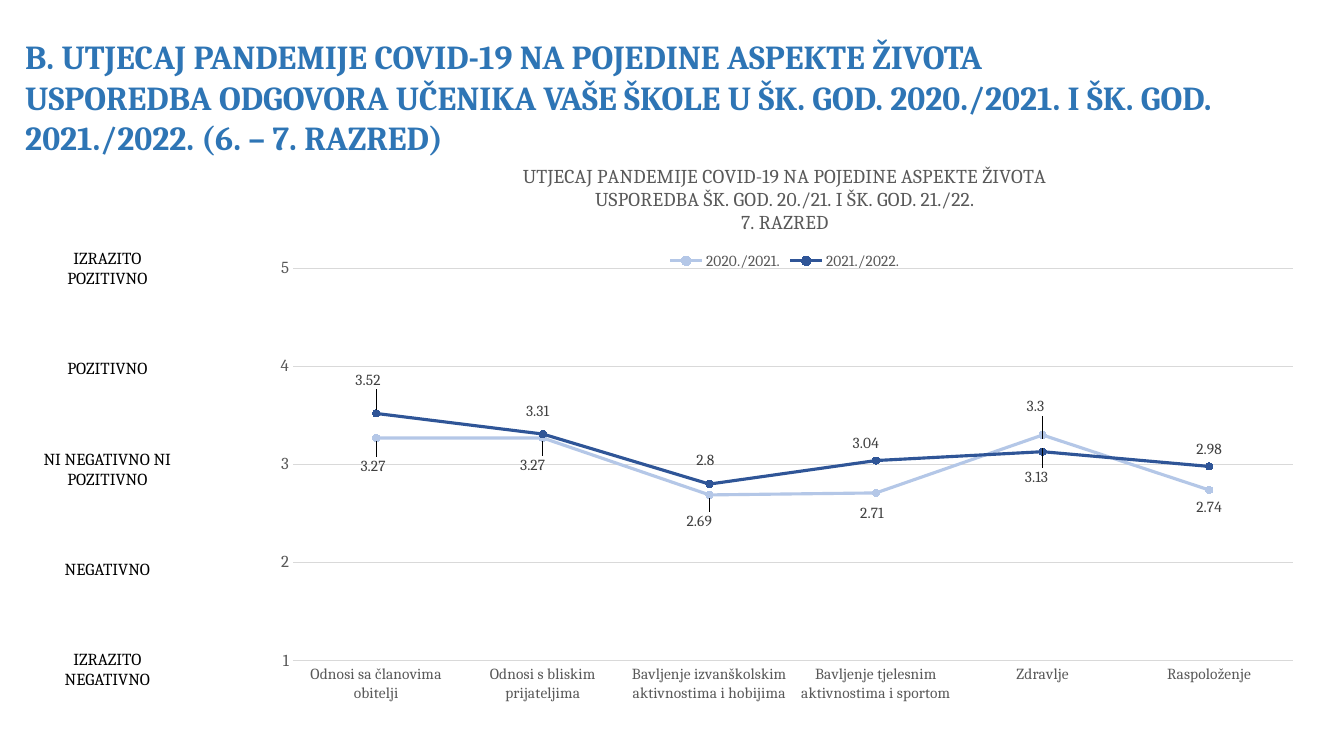
from lxml import etree
from pptx import Presentation
from pptx.chart.data import CategoryChartData
from pptx.dml.color import RGBColor
from pptx.enum.chart import XL_CHART_TYPE, XL_LABEL_POSITION, XL_LEGEND_POSITION, XL_MARKER_STYLE, XL_TICK_MARK
from pptx.enum.text import MSO_ANCHOR, MSO_AUTO_SIZE, PP_ALIGN
from pptx.oxml.ns import qn
from pptx.util import Inches, Pt

LINE = XL_CHART_TYPE.LINE_MARKERS
ABOVE, BELOW = XL_LABEL_POSITION.ABOVE, XL_LABEL_POSITION.BELOW
TOP_KEY = XL_LEGEND_POSITION.TOP
CIRCLE = XL_MARKER_STYLE.CIRCLE
NO_TICK = XL_TICK_MARK.NONE
TOP, FIXED = MSO_ANCHOR.TOP, MSO_AUTO_SIZE.NONE
LEFT, CENTER = PP_ALIGN.LEFT, PP_ALIGN.CENTER

HEAD = [
    "B. UTJECAJ PANDEMIJE COVID-19 NA POJEDINE ASPEKTE ŽIVOTA",
    "USPOREDBA ODGOVORA UČENIKA VAŠE ŠKOLE U ŠK. GOD. 2020./2021. I ŠK. GOD. 2021./2022. (6. – 7. RAZRED)",
]
SCALE = ["IZRAZITO POZITIVNO", "POZITIVNO", "NI NEGATIVNO NI POZITIVNO", "NEGATIVNO", "IZRAZITO NEGATIVNO"]
CAPTION = [
    "UTJECAJ PANDEMIJE COVID-19 NA POJEDINE ASPEKTE ŽIVOTA",
    "USPOREDBA ŠK. GOD. 20./21. I ŠK. GOD. 21./22.",
    "7. RAZRED",
]
TOPICS = [
    "Odnosi sa članovima obitelji",
    "Odnosi s bliskim prijateljima",
    "Bavljenje izvanškolskim aktivnostima i hobijima",
    "Bavljenje tjelesnim aktivnostima i sportom",
    "Zdravlje",
    "Raspoloženje",
]
YEARS = [
    {"name": "2020./2021.", "vals": [3.27, 3.27, 2.69, 2.71, 3.3, 2.74], "color": "pale", "side": BELOW,
     "shifts": [(-0.03, 0.11), (-0.1, 0.1), (-0.1, 0.09), (-0.04, 0.03), (-0.07, -0.45)]},
    {"name": "2021./2022.", "vals": [3.52, 3.31, 2.8, 3.04, 3.13, 2.98], "color": "deep", "side": ABOVE,
     "shifts": [(-0.08, -0.16), (-0.05, -0.06), (-0.04, -0.07), (-0.1, 0), (-0.06, 0.42)]},
]
THEME = {
    "font": "Cambria",
    "color": {"head": "2E75B5", "ink": "000000", "gray": "595959", "label": "404040",
              "grid": "D9D9D9", "pale": "B4C7E7", "deep": "2F5597"},
    "size": {"head": 24, "caption": 14, "scale": 12, "small": 11},
}
WIDE, HIGH = 11.09, 6.08
PLOT = {"x": 0.06, "y": 0.204, "w": 0.894, "h": 0.641}


def paint(name):
    return RGBColor.from_string(THEME["color"][name])


def style(font, size, color, bold=False):
    font.name = THEME["font"]
    font.size = Pt(THEME["size"][size])
    font.bold = bold
    font.color.rgb = paint(color)


def fill_text(frame, lines, size, color, align, bold=False, gap=0):
    frame.text = "\n".join(lines)
    for i, para in enumerate(frame.paragraphs):
        para.alignment = align
        if i and gap:
            para.space_before = Pt(gap)
        for run in para.runs:
            style(run.font, size, color, bold)


def layout(parts):
    root = etree.Element(qn("c:layout"))
    manual = etree.SubElement(root, qn("c:manualLayout"))
    for tag, val in parts.items():
        etree.SubElement(manual, qn("c:" + tag)).set("val", str(val))
    return root


def draw_line(line, name, width):
    line.color.rgb = paint(name)
    line.width = Pt(width)


def add_chart(slide):
    data = CategoryChartData()
    data.categories = TOPICS
    for year in YEARS:
        data.add_series(year["name"], year["vals"])
    chart = slide.shapes.add_chart(LINE, Inches(2.24), Inches(1.42), Inches(WIDE), Inches(HIGH), data).chart
    style(chart.font, "small", "ink")
    chart.has_title = True
    fill_text(chart.chart_title.text_frame, CAPTION, "caption", "gray", CENTER)
    chart.chart_title.include_in_layout = False
    chart.has_legend = True
    chart.legend.position = TOP_KEY
    chart.legend.include_in_layout = False
    style(chart.legend.font, "small", "gray")

    cats, vals = chart.category_axis, chart.value_axis
    for axis, size in ((cats, "small"), (vals, "scale")):
        axis.major_tick_mark = axis.minor_tick_mark = NO_TICK
        style(axis.tick_labels.font, size, "gray")
    draw_line(cats.format.line, "grid", 0.75)
    vals.format.line.fill.background()
    vals.minimum_scale, vals.maximum_scale, vals.major_unit = 1, 5, 1
    vals.tick_labels.number_format = "0"
    vals.tick_labels.number_format_is_linked = False
    draw_line(vals.major_gridlines.format.line, "grid", 0.75)

    area = chart._chartSpace.find(".//" + qn("c:plotArea"))
    for old in area.findall(qn("c:layout")):
        area.remove(old)
    area.insert(0, layout({"layoutTarget": "inner", "xMode": "edge", "yMode": "edge", **PLOT}))
    for year, series in zip(YEARS, chart.plots[0].series):
        add_style(year, series)


def add_style(year, series):
    series.smooth = False
    draw_line(series.format.line, year["color"], 2.25)
    mark = series.marker
    mark.style, mark.size = CIRCLE, 5
    mark.format.fill.solid()
    mark.format.fill.fore_color.rgb = paint(year["color"])
    draw_line(mark.format.line, year["color"], 0.75)
    labels = series.data_labels
    labels.show_value = True
    labels.position = year["side"]
    style(labels.font, "small", "label")
    for i, _ in enumerate(year["shifts"]):
        label = series.points[i].data_label
        style(label.font, "small", "label")
        label.position = year["side"]
    nodes = series._element.findall(".//" + qn("c:dLbl"))
    for node, (dx, dy) in zip(nodes, year["shifts"]):
        node.insert(1, layout({"x": dx / WIDE, "y": dy / HIGH}))


def main():
    deck = Presentation()
    deck.slide_width, deck.slide_height = Inches(13.33), Inches(7.5)
    slide = deck.slides.add_slide(deck.slide_layouts[5])
    title = slide.shapes.title
    title.left, title.top, title.width, title.height = map(Inches, (0.15, 0.31, 13.18, 1.31))
    title.text_frame.vertical_anchor = TOP
    title.text_frame.auto_size = FIXED
    fill_text(title.text_frame, HEAD, "head", "head", LEFT, bold=True)
    scale = slide.shapes.add_textbox(*map(Inches, (0.31, 2.41, 1.51, 4.52)))
    scale.text_frame.word_wrap = True
    fill_text(scale.text_frame, SCALE, "scale", "ink", CENTER, gap=50)
    add_chart(slide)
    deck.save("out.pptx")


if __name__ == "__main__":
    main()
